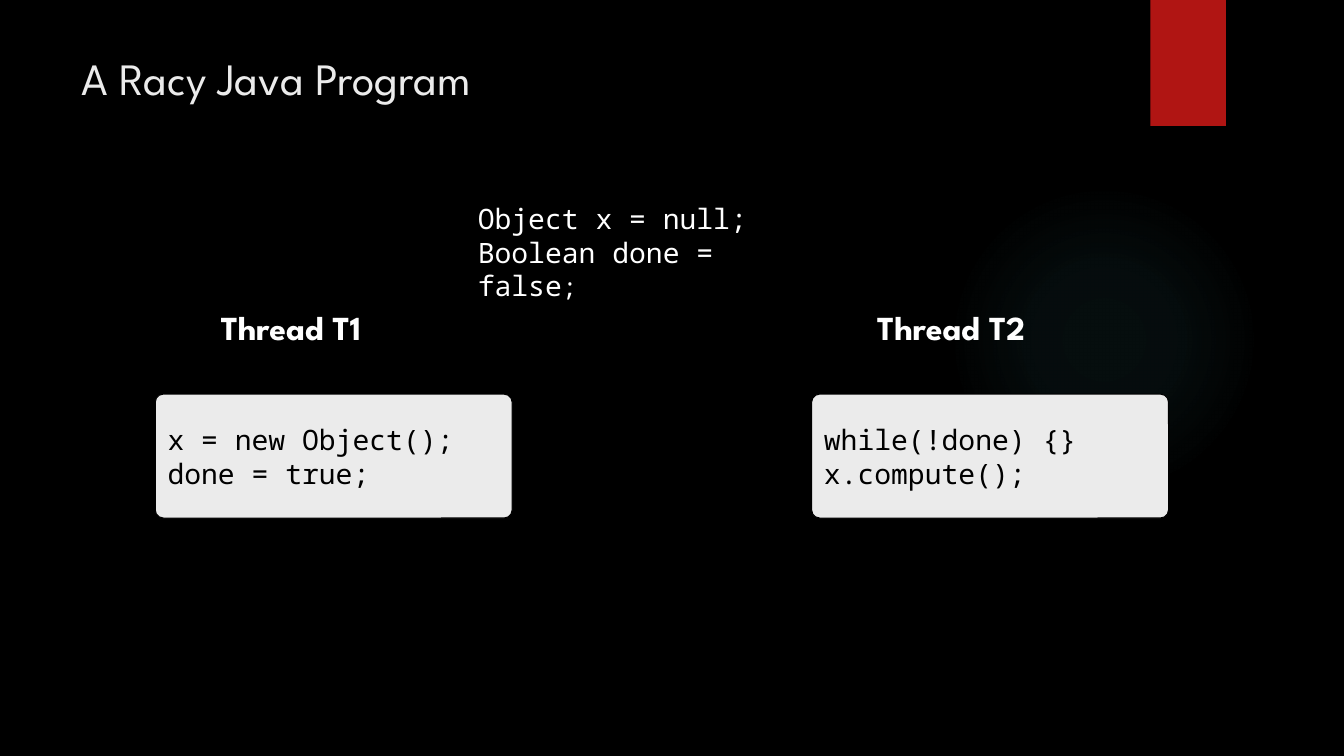
from dataclasses import dataclass

from lxml import etree
from pptx import Presentation
from pptx.dml.color import RGBColor
from pptx.enum.shapes import MSO_SHAPE
from pptx.enum.text import MSO_ANCHOR, PP_ALIGN
from pptx.oxml import parse_xml
from pptx.oxml.ns import nsdecls, qn
from pptx.util import Inches, Pt


@dataclass(frozen=True)
class Theme:
    background: str = "000000"
    light: str = "EBEBEB"
    white: str = "FFFFFF"
    dark: str = "000000"
    accent: str = "B01513"
    glow: str = "50B9C1"
    heading_font: str = "League Spartan"
    code_font: str = "Noto Sans Mono"
    title_size: int = 32
    label_size: int = 24
    code_size: int = 20
    small_code_size: int = 18


THEME = Theme()


def color(value):
    return RGBColor.from_string(value)


def write_lines(frame, lines, font, size, ink, bold=False):
    frame.word_wrap = True
    for index, line in enumerate(lines):
        para = frame.paragraphs[0] if index == 0 else frame.add_paragraph()
        para.alignment = PP_ALIGN.LEFT
        para.font.name = font
        para.font.size = Pt(size)
        para.font.bold = bold
        para.font.color.rgb = color(ink)
        para.add_run().text = line


def add_text(page, left, top, width, height, lines, font, size, ink, bold=False):
    box = page.shapes.add_textbox(Inches(left), Inches(top), Inches(width), Inches(height))
    write_lines(box.text_frame, lines, font, size, ink, bold)
    return box


def add_block(page, kind, left, top, width, height, fill):
    block = page.shapes.add_shape(kind, Inches(left), Inches(top), Inches(width), Inches(height))
    block.shadow.inherit = False
    block.fill.solid()
    block.fill.fore_color.rgb = color(fill)
    block.line.fill.background()
    return block


def add_glow(page, left, top, size):
    glow = add_block(page, MSO_SHAPE.OVAL, left, top, size, size, THEME.glow)
    stops = "".join(
        f'<a:gs pos="{position * 1000}"><a:srgbClr val="{THEME.glow}">'
        f'<a:alpha val="{alpha * 1000}"/></a:srgbClr></a:gs>'
        for position, alpha in ((0, 7), (36, 6), (69, 0))
    )
    gradient = parse_xml(
        f'<a:gradFill {nsdecls("a")}><a:gsLst>{stops}</a:gsLst><a:path path="circle">'
        '<a:fillToRect l="50000" t="50000" r="50000" b="50000"/></a:path></a:gradFill>'
    )
    properties = glow.element.spPr
    properties.replace(properties.find(qn("a:solidFill")), gradient)


def add_backdrop(page):
    page.background.fill.solid()
    page.background.fill.fore_color.rgb = color(THEME.background)
    add_glow(page, 9.41, 1.83, 3.08)
    add_block(page, MSO_SHAPE.RECTANGLE, 11.41, 0, 0.75, 1.25, THEME.accent)


def add_shared_state(page, left, top):
    box = add_text(page, left, top, 3.61, 0.77, ["Object x = null;", "Boolean done = false"],
                   THEME.code_font, THEME.code_size, THEME.white)
    span = box.text_frame.paragraphs[-1].add_run()
    span.text = ";"
    span.font.size = Pt(THEME.small_code_size)


def add_thread(page, left, top, name, code):
    panel = add_block(page, MSO_SHAPE.ROUNDED_RECTANGLE, left, top + 0.91, 3.54, 1.23, THEME.light)
    panel.adjustments[0] = 0.066
    panel.line.color.rgb = color(THEME.dark)
    panel.line.width = Pt(0.75)
    panel.text_frame.vertical_anchor = MSO_ANCHOR.MIDDLE
    write_lines(panel.text_frame, code, THEME.code_font, THEME.code_size, THEME.dark)
    label = add_text(page, left + 0.2, top, 2.9, 0.5, [name],
                     THEME.heading_font, THEME.label_size, THEME.white, bold=True)
    label.text_frame.margin_left = Inches(0.45)


def main():
    deck = Presentation()
    deck.slide_width, deck.slide_height = Inches(13.33), Inches(7.5)
    page = deck.slides.add_slide(deck.slide_layouts[6])
    add_backdrop(page)
    add_text(page, 0.71, 0.45, 10.29, 1.53, ["A Racy Java Program"],
             THEME.heading_font, THEME.title_size, THEME.light)
    add_shared_state(page, 4.64, 1.95)
    add_thread(page, 1.54, 3, "Thread T1", ["x = new Object();", "done = true;"])
    add_thread(page, 8.05, 3, "Thread T2", ["while(!done) {}", "x.compute();"])
    deck.save("out.pptx")


if __name__ == "__main__":
    main()
